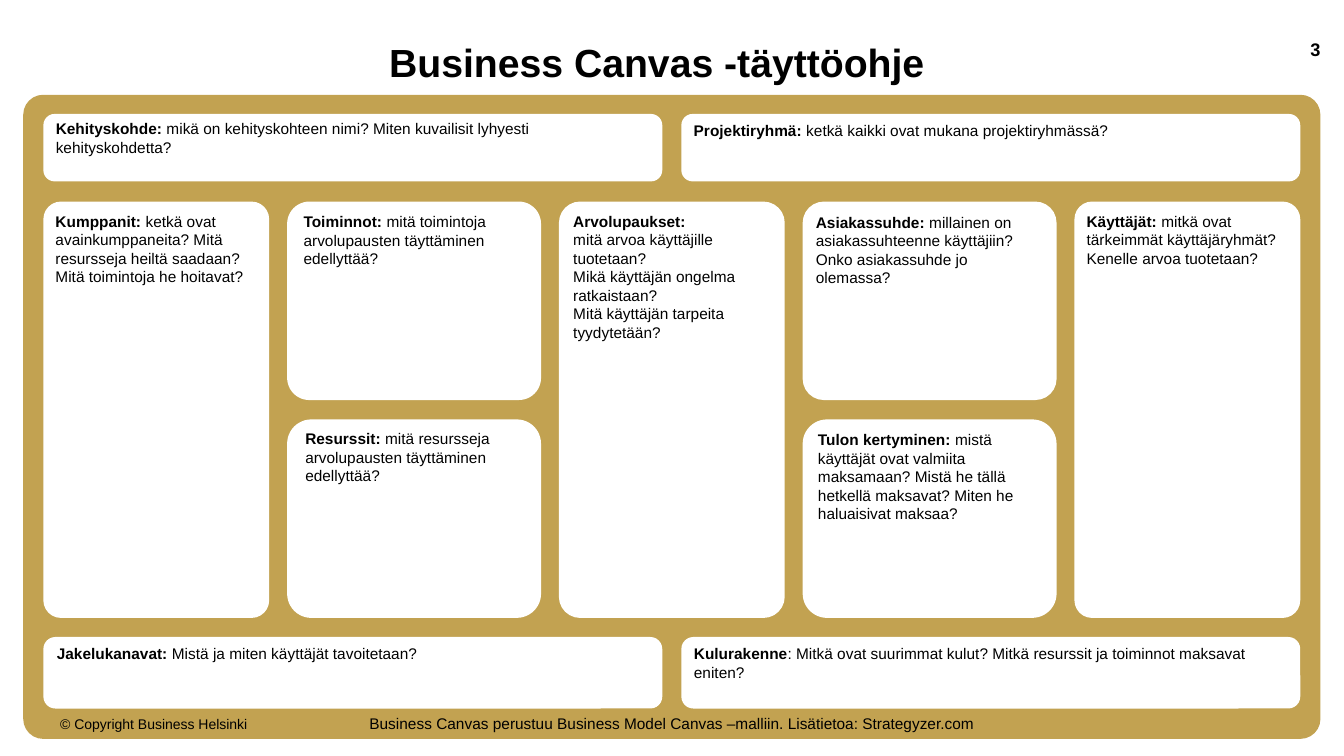
from pptx import Presentation
from pptx.dml.color import RGBColor
from pptx.enum import shapes, text
from pptx.util import Pt

COLORS = {"panel": "C2A251", "card": "FFFFFF", "text": "000000"}
FONT = "Arial"
CARD_SIZE = 11

# Horizontal spans and vertical spans of the canvas, in points
LEFT, RIGHT = 31, 928.8
NARROW, WIDE = 161.3, 181.4
HALF_WIDTH = 442.1
COLUMN_WIDTHS = [NARROW, WIDE, NARROW, WIDE, NARROW]
BODY_TOP, BODY_HEIGHT, BOX_HEIGHT = 144, 297.4, 141.8
ROWS = {
    "header": (81.4, 48.2),
    "body": (BODY_TOP, BODY_HEIGHT),
    "upper": (BODY_TOP, BOX_HEIGHT),
    "lower": (BODY_TOP + BODY_HEIGHT - BOX_HEIGHT, BOX_HEIGHT),
    "footer": (455, 51.1),
}

# column, row, corner, text shift (x, y), heading, following text, further paragraphs
CARDS = [
    ("left half", "header", 0.167, (-0.7, -2.2), "Kehityskohde:",
     " mikä on kehityskohteen nimi? Miten kuvailisit lyhyesti kehityskohdetta?", []),
    ("right half", "header", 0.167, (-0.7, -0.7), "Projektiryhmä:",
     " ketkä kaikki ovat mukana projektiryhmässä?", []),
    (0, "body", 0.078, (-2.2, 0), "Kumppanit:",
     " ketkä ovat avainkumppaneita? Mitä resursseja heiltä saadaan? "
     "Mitä toimintoja he hoitavat?", []),
    (1, "upper", 0.112, (0, -0.7), "Toiminnot:",
     " mitä toimintoja arvolupausten täyttäminen edellyttää?", []),
    (1, "lower", 0.122, (0.7, -1.4), "Resurssit:",
     " mitä resursseja arvolupausten täyttäminen edellyttää?", []),
    (2, "body", 0.094, (-1.4, -0.7), "Arvolupaukset:", "",
     ["mitä arvoa käyttäjille tuotetaan?",
      "Mikä käyttäjän ongelma ratkaistaan?",
      "Mitä käyttäjän tarpeita tyydytetään?"]),
    (3, "upper", 0.107, (-2.2, 0), "Asiakassuhde:",
     " millainen on asiakassuhteenne käyttäjiin? Onko asiakassuhde jo olemassa?", []),
    (3, "lower", 0.123, (-1.4, -0.7), "Tulon kertyminen:",
     " mistä käyttäjät ovat valmiita maksamaan? Mistä he tällä hetkellä maksavat? "
     "Miten he haluaisivat maksaa?", []),
    (4, "body", 0.078, (-2.2, 0), "Käyttäjät:",
     " mitkä ovat tärkeimmät käyttäjäryhmät? Kenelle arvoa tuotetaan?", []),
    ("left half", "footer", 0.167, (0, -0.7), "Jakelukanavat:",
     " Mistä ja miten käyttäjät tavoitetaan?", []),
    ("right half", "footer", 0.167, (-0.7, -0.7), "Kulurakenne",
     ": Mitkä ovat suurimmat kulut? Mitkä resurssit ja toiminnot maksavat eniten?", []),
]

# text, box, size, bold, alignment
CENTER, END = text.PP_ALIGN.CENTER, text.PP_ALIGN.RIGHT
LABELS = [
    ("Business Canvas perustuu Business Model Canvas –malliin. Lisätietoa: Strategyzer.com",
     (239, 506.2, 482.4, 21.6), 11, False, CENTER),
    ("© Copyright Business Helsinki", (23.8, 506.2, 172, 21.6), 10, False, CENTER),
    ("3", (846, 25.2, 97.2, 20.2), 13, True, END),
    ("Business Canvas -täyttöohje", (206.6, 25.9, 524.9, 36), 28, True, CENTER),
]


def column_spans():
    """Return (left, width) by column number or half name, with equal gaps."""
    gap = (RIGHT - LEFT - sum(COLUMN_WIDTHS)) / (len(COLUMN_WIDTHS) - 1)
    spans = {"left half": (LEFT, HALF_WIDTH),
             "right half": (RIGHT - HALF_WIDTH, HALF_WIDTH)}
    left = LEFT
    for number, width in enumerate(COLUMN_WIDTHS):
        spans[number] = (left, width)
        left += width + gap
    return spans


def style_font(font, size, bold=None):
    font.name, font.size, font.bold = FONT, Pt(size), bold
    font.color.rgb = RGBColor.from_string(COLORS["text"])


def add_rounded(slide, box, corner, color):
    shape = slide.shapes.add_shape(
        shapes.MSO_SHAPE.ROUNDED_RECTANGLE, *(Pt(length) for length in box))
    shape.adjustments[0] = corner
    shape.shadow.inherit = False
    shape.fill.solid()
    shape.fill.fore_color.rgb = RGBColor.from_string(COLORS[color])
    shape.line.fill.background()
    return shape


def add_card(slide, box, corner, shift, heading, rest, more):
    frame = add_rounded(slide, box, corner, "card").text_frame
    frame.word_wrap = True
    frame.vertical_anchor = text.MSO_ANCHOR.TOP
    frame.margin_left, frame.margin_right = Pt(7.2 + shift[0]), Pt(7.2 - shift[0])
    frame.margin_top = Pt(3.6 + shift[1])
    first = frame.paragraphs[0]
    run = first.add_run()
    run.text = heading
    run.font.bold = True
    if rest:
        first.add_run().text = rest
    for line in more:
        frame.add_paragraph().text = line
    for paragraph in frame.paragraphs:
        paragraph.alignment = text.PP_ALIGN.LEFT
        style_font(paragraph.font, CARD_SIZE)


def add_label(slide, wording, box, size, bold, alignment):
    frame = slide.shapes.add_textbox(*(Pt(length) for length in box)).text_frame
    frame.word_wrap = True
    frame.vertical_anchor = text.MSO_ANCHOR.MIDDLE
    frame.margin_left = frame.margin_right = frame.margin_top = frame.margin_bottom = 0
    paragraph = frame.paragraphs[0]
    paragraph.text = wording
    paragraph.alignment = alignment
    style_font(paragraph.font, size, bold)


def main():
    presentation = Presentation()
    presentation.slide_width, presentation.slide_height = Pt(960), Pt(540)
    slide = presentation.slides.add_slide(presentation.slide_layouts[6])
    add_rounded(slide, (16.6, 67.7, 926.6, 460.1), 0.031, "panel")
    spans = column_spans()
    for column, row, *card in CARDS:
        left, width = spans[column]
        top, height = ROWS[row]
        add_card(slide, (left, top, width, height), *card)
    for label in LABELS:
        add_label(slide, *label)
    presentation.save("out.pptx")


if __name__ == "__main__":
    main()
